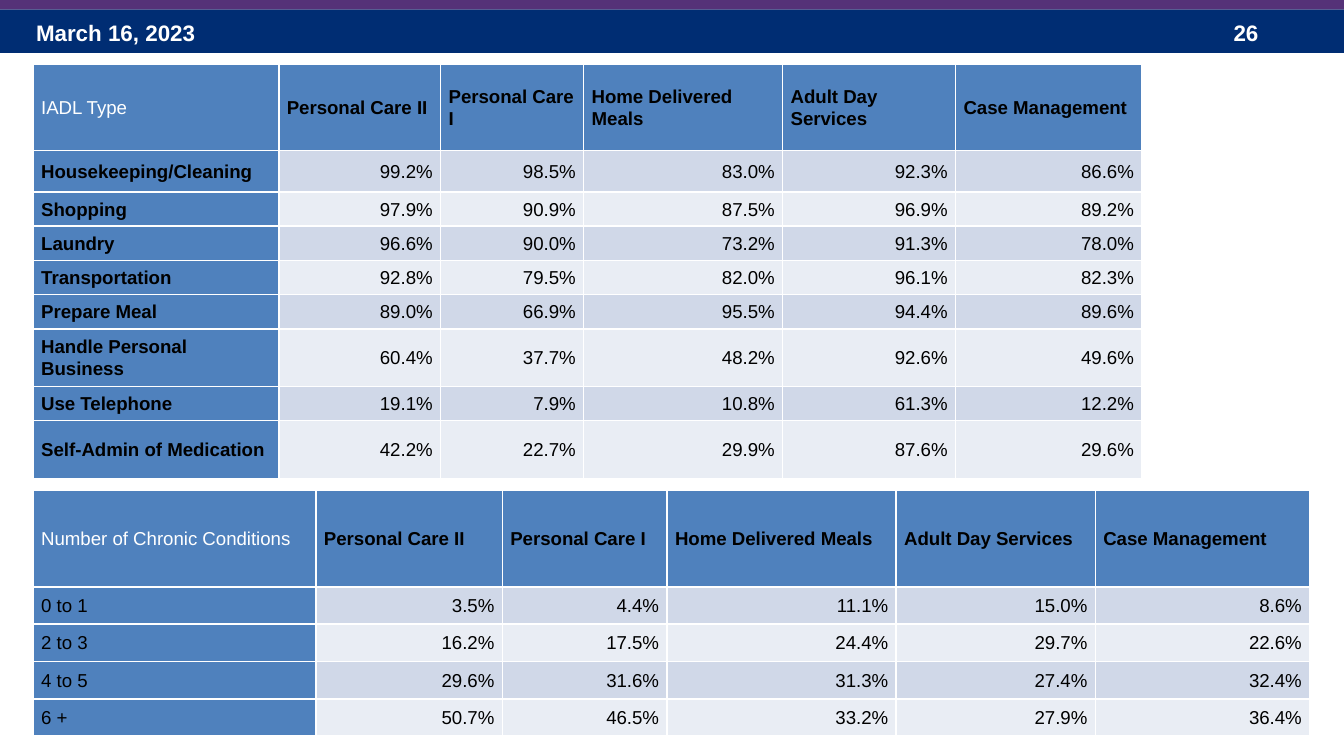
from lxml import etree
from pptx import Presentation
from pptx.dml.color import RGBColor
from pptx.enum.shapes import MSO_SHAPE
from pptx.enum.text import MSO_ANCHOR, PP_ALIGN
from pptx.oxml.ns import qn
from pptx.util import Inches, Pt

RECT = MSO_SHAPE.RECTANGLE
MIDDLE = MSO_ANCHOR.MIDDLE
LEFT, RIGHT = PP_ALIGN.LEFT, PP_ALIGN.RIGHT

WIDTH = Inches(10)
HEIGHT = WIDTH * 9 // 16
COLORS = {
    "white": "FFFFFF",
    "black": "000000",
    "navy": "002D73",
    "purple": "553278",
    "blue": "4F81BD",
    "band_dark": "D0D8E8",
    "band_light": "E9EDF4",
}
CELL_FORMAT = {
    "margin_left": Inches(0.06),
    "margin_right": Inches(0.06),
    "margin_top": 0,
    "margin_bottom": 0,
    "vertical_anchor": MIDDLE,
}
COLUMN_SHARES = [22.15, 14.6, 12.9, 17.95, 15.6, 16.8]
SERVICES = ["Personal Care II ", "Personal Care I ", "Home Delivered Meals ",
            "Adult Day Services ", "Case Management"]
IADL_ROWS = [
    ("Housekeeping/Cleaning", 99.2, 98.5, 83.0, 92.3, 86.6),
    ("Shopping", 97.9, 90.9, 87.5, 96.9, 89.2),
    ("Laundry", 96.6, 90.0, 73.2, 91.3, 78.0),
    ("Transportation", 92.8, 79.5, 82.0, 96.1, 82.3),
    ("Prepare Meal", 89.0, 66.9, 95.5, 94.4, 89.6),
    ("Handle Personal Business", 60.4, 37.7, 48.2, 92.6, 49.6),
    ("Use Telephone", 19.1, 7.9, 10.8, 61.3, 12.2),
    ("Self-Admin of Medication", 42.2, 22.7, 29.9, 87.6, 29.6),
]
CONDITION_ROWS = [
    ("0 to 1", 3.5, 4.4, 11.1, 15.0, 8.6),
    ("2 to 3", 16.2, 17.5, 24.4, 29.7, 22.6),
    ("4 to 5", 29.6, 31.6, 31.3, 27.4, 32.4),
    ("6 +", 50.7, 46.5, 33.2, 27.9, 36.4),
]


def rgb(name):
    return RGBColor.from_string(COLORS[name])


def place(box):
    x, y, w, h = box
    return [int(v * side / 100) for v, side in
            ((x, WIDTH), (y, HEIGHT), (w, WIDTH), (h, HEIGHT))]


def write(p, text, size, color, bold, align=LEFT):
    p.alignment = align
    r = p.add_run()
    r.text = text
    font = {"name": "Arial", "size": Pt(size), "bold": bold}
    for key, value in font.items():
        setattr(r.font, key, value)
    r.font.color.rgb = rgb(color)


def add_bar(s, box, color):
    sp = s.shapes.add_shape(RECT, *place(box))
    sp.shadow.inherit = False
    sp.fill.solid()
    sp.fill.fore_color.rgb = rgb(color)
    sp.line.fill.background()


def add_label(s, box, text):
    tf = s.shapes.add_textbox(*place(box)).text_frame
    tf.word_wrap = True
    tf.vertical_anchor = MIDDLE
    write(tf.paragraphs[0], text, 12, "white", True)


def add_banner(s, box):
    x, y, w, h = box
    add_bar(s, (x, y + 0.22 * h, w, 0.78 * h), "navy")
    text_y, text_h = y + 0.28 * h, 0.72 * h
    add_label(s, (x + 0.017 * w, text_y, 0.23 * w, text_h), "March 16, 2023")
    add_label(s, (x + 0.908 * w, text_y, 0.08 * w, text_h), "26")
    add_bar(s, (x, y, w, 0.22 * h), "purple")


def set_borders(cell):
    tcPr = cell._tc.get_or_add_tcPr()
    for i, tag in enumerate(("a:lnL", "a:lnR", "a:lnT", "a:lnB")):
        ln = etree.Element(qn(tag), w=str(Pt(1)))
        fill = etree.SubElement(ln, qn("a:solidFill"))
        etree.SubElement(fill, qn("a:srgbClr"), val=COLORS["white"])
        tcPr.insert(i, ln)


def format_cell(cell, text, fill, color, bold, align=LEFT):
    for key, value in CELL_FORMAT.items():
        setattr(cell, key, value)
    cell.fill.solid()
    cell.fill.fore_color.rgb = rgb(fill)
    set_borders(cell)
    p = cell.text_frame.paragraphs[0]
    p.line_spacing = 1.07
    write(p, text, 10, color, bold, align)


def add_service_table(s, box, title, records, row_weights, bold_labels):
    x, y, w, h = place(box)
    table = s.shapes.add_table(len(records) + 1, len(COLUMN_SHARES), x, y, w, h).table
    for column, share in zip(table.columns, COLUMN_SHARES):
        column.width = int(w * share / sum(COLUMN_SHARES))
    for row, weight in zip(table.rows, row_weights):
        row.height = int(h * weight / sum(row_weights))
    for j, text in enumerate([title] + SERVICES):
        color = "black" if j else "white"
        format_cell(table.cell(0, j), text, "blue", color, j > 0)
    for i, (label, *values) in enumerate(records, 1):
        format_cell(table.cell(i, 0), label, "blue", "black", bold_labels)
        band = "band_dark" if i % 2 else "band_light"
        for j, value in enumerate(values, 1):
            format_cell(table.cell(i, j), f"{value:.1f}%", band, "black", False, RIGHT)


def main():
    prs = Presentation()
    prs.slide_width, prs.slide_height = WIDTH, HEIGHT
    s = prs.slides.add_slide(prs.slide_layouts[6])
    add_banner(s, (0, -0.4, 100, 7.4))
    add_service_table(s, (2.47, 8.55, 82.5, 54.75), "IADL Type", IADL_ROWS,
                      [64, 31, 25.5, 25.5, 25.5, 25.5, 43, 25.5, 43], True)
    add_service_table(s, (2.47, 64.9, 95, 32.5), "Number of Chronic Conditions",
                      CONDITION_ROWS, [72, 28, 28, 28, 28], False)
    prs.save("out.pptx")


if __name__ == "__main__":
    main()
